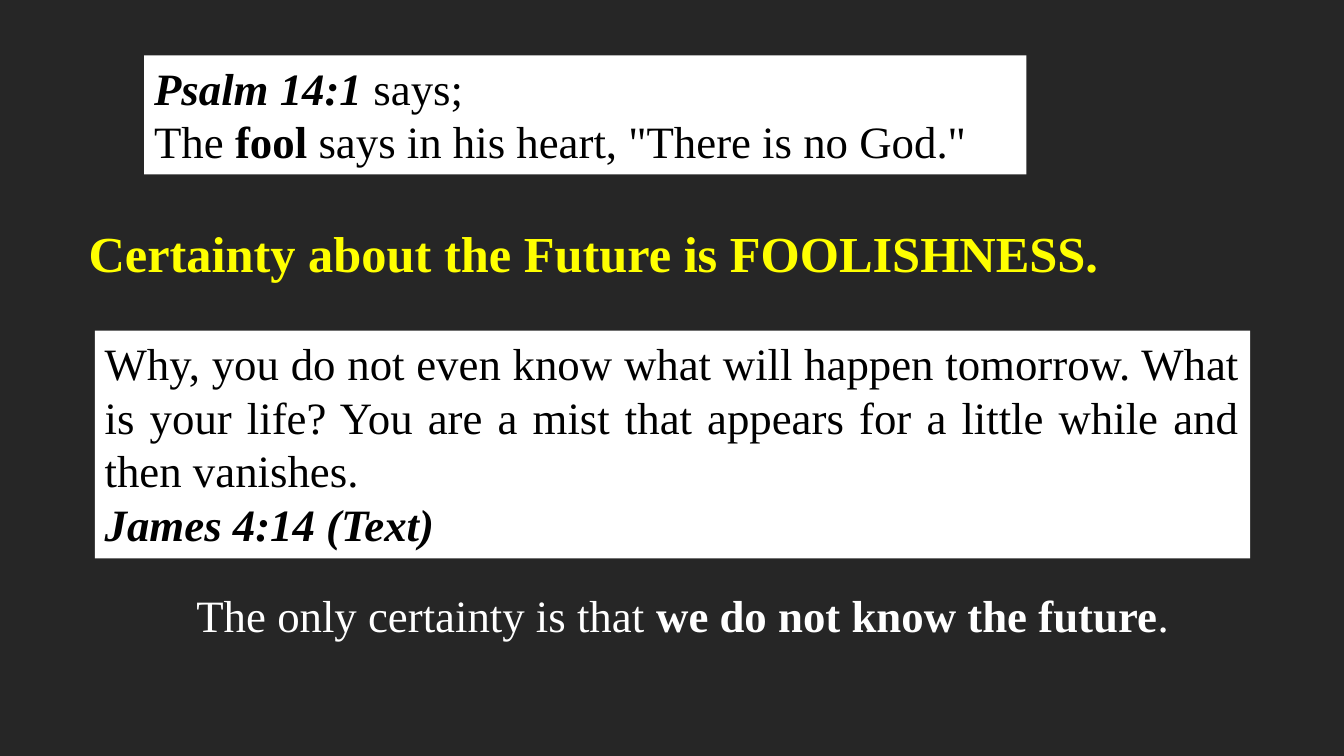
from pptx import Presentation
from pptx import util as u
from pptx.dml.color import RGBColor
from pptx.enum import shapes, text


def color(value):
    return RGBColor.from_string(value)


def write(box, paragraphs, size, ink, wrap=True, align=text.PP_ALIGN.LEFT):
    frame = box.text_frame
    frame.word_wrap = wrap
    frame.auto_size = text.MSO_AUTO_SIZE.SHAPE_TO_FIT_TEXT
    frame.vertical_anchor = text.MSO_ANCHOR.TOP
    for index, spans in enumerate(paragraphs):
        para = frame.add_paragraph() if index else frame.paragraphs[0]
        para.alignment = align
        para.font.name = "Times New Roman"
        para.font.size = u.Pt(size)
        para.font.color.rgb = color(ink)
        for words, style in spans:
            span = para.add_run()
            span.text = words
            if "b" in style:
                span.font.bold = True
            if "i" in style:
                span.font.italic = True


deck = Presentation()
deck.slide_width = u.Inches(13.33)
deck.slide_height = u.Inches(7.5)
page = deck.slides.add_slide(deck.slide_layouts[6])
page.background.fill.solid()
page.background.fill.fore_color.rgb = color("262626")

heading = page.shapes.add_textbox(u.Inches(0.78), u.Inches(2.15), u.Inches(13.22), u.Inches(0.71))
write(heading, [[("Certainty about the Future is FOOLISHNESS.", "b")]], 36, "FFFF00")

psalm = [
    [("Psalm 14:1 ", "bi"), ("says;", "")],
    [("The ", ""), ("fool", "b"), (' says in his heart, "There is no God."', "")],
]
james = [
    [("Why, you do not even know what will happen tomorrow. What is your life? "
      "You are a mist that appears for a little while and then vanishes.", "")],
    [("James 4:14 (Text)", "bi")],
]
verses = [
    ((1.43, 0.55, 8.75, 1.18), psalm, False, text.PP_ALIGN.LEFT),
    ((0.94, 3.28, 11.46, 2.26), james, True, text.PP_ALIGN.JUSTIFY),
]
for place, paragraphs, wrap, align in verses:
    verse = page.shapes.add_shape(shapes.MSO_SHAPE.RECTANGLE, *map(u.Inches, place))
    verse.shadow.inherit = False
    verse.fill.solid()
    verse.fill.fore_color.rgb = color("FFFFFF")
    verse.line.fill.background()
    write(verse, paragraphs, 32, "000000", wrap, align)

closing = page.shapes.add_textbox(u.Inches(1.85), u.Inches(5.78), u.Inches(9.93), u.Inches(0.64))
write(closing, [[("The only certainty is that ", ""), ("we do not know the future", "b"), (".", "")]],
      32, "FFFFFF", wrap=False)

deck.save("out.pptx")
